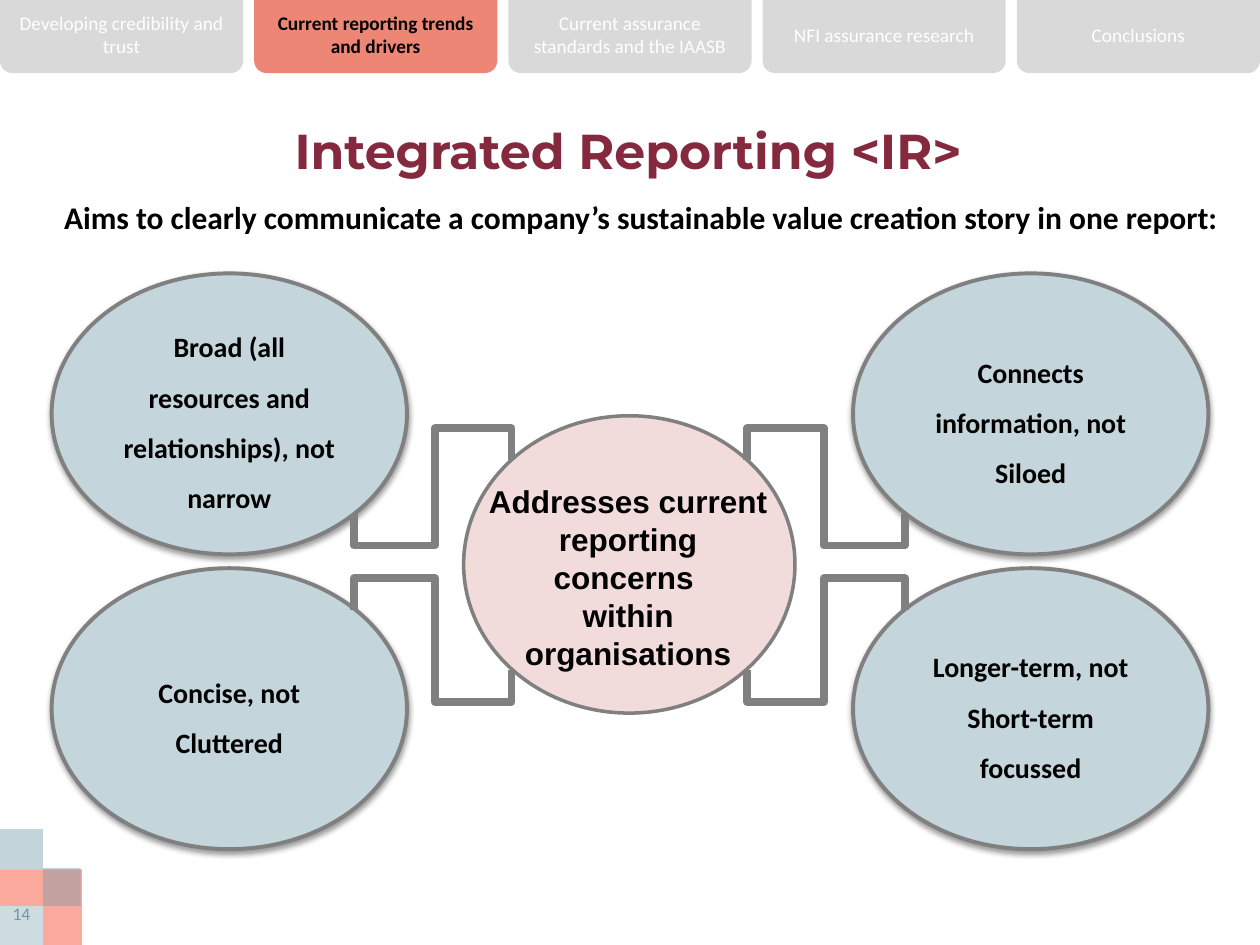
from lxml import etree
from pptx import Presentation
from pptx.dml.color import RGBColor
from pptx.enum.shapes import MSO_SHAPE
from pptx.enum.text import MSO_ANCHOR, PP_ALIGN
from pptx.oxml import parse_xml
from pptx.oxml.ns import nsdecls, qn
from pptx.util import Inches, Pt

BLACK = RGBColor(0x00, 0x00, 0x00)
WHITE = RGBColor(0xFF, 0xFF, 0xFF)
GREY = RGBColor(0x80, 0x80, 0x80)
TAB_GREY = RGBColor(0xD9, 0xD9, 0xD9)
TAB_ACTIVE = RGBColor(0xED, 0x86, 0x74)
MAROON = RGBColor(0x85, 0x29, 0x3F)
PINK = RGBColor(0xF2, 0xDC, 0xDB)
PALE_BLUE = RGBColor(0xC5, 0xD5, 0xDC)
SLATE = RGBColor(0x71, 0x98, 0xA9)
SALMON = RGBColor(0xFA, 0xA9, 0x9C)
LIGHT_BLUE = RGBColor(0xCE, 0xDB, 0xE0)

SHADOW = (
    f'<a:effectLst {nsdecls("a")}>'
    '<a:outerShdw blurRad="40000" dist="20000" dir="5400000" rotWithShape="0">'
    '<a:srgbClr val="000000"><a:alpha val="38000"/></a:srgbClr>'
    '</a:outerShdw></a:effectLst>'
)


def add_filled_shape(kind, left, top, width, height, fill, line_width=None):
    shape = slide.shapes.add_shape(
        kind, Inches(left), Inches(top), Inches(width), Inches(height))
    shape.shadow.inherit = False
    shape.fill.solid()
    shape.fill.fore_color.rgb = fill
    if line_width is None:
        shape.line.fill.background()
    else:
        shape.line.color.rgb = GREY
        shape.line.width = Pt(line_width)
    return shape


def write_text(shape, lines, size, color, bold=False, font="Calibri",
               align=PP_ALIGN.CENTER, spacing=None):
    frame = shape.text_frame
    frame.word_wrap = True
    for index, line in enumerate(lines):
        paragraph = frame.add_paragraph() if index else frame.paragraphs[0]
        paragraph.alignment = align
        paragraph.line_spacing = spacing
        run = paragraph.add_run()
        run.text = line
        run.font.name = font
        run.font.size = Pt(size)
        run.font.bold = bold
        run.font.color.rgb = color


presentation = Presentation()
presentation.slide_width = Inches(10)
presentation.slide_height = Inches(7.5)
slide = presentation.slides.add_slide(presentation.slide_layouts[5])

# Title
title = slide.shapes.title
title.left, title.top = Inches(0.12), Inches(0.69)
title.width, title.height = Inches(9.73), Inches(1)
title.text_frame.vertical_anchor = MSO_ANCHOR.MIDDLE
write_text(title, ["Integrated Reporting <IR>"], 28, MAROON, True, "Montserrat")

# Corner squares
squares = [
    (0, 6.9, 0.65, 0.61, SALMON, None),
    (0, 7.19, 0.34, 0.32, LIGHT_BLUE, None),
    (0, 6.58, 0.34, 0.32, SLATE, 41000),
    (0.34, 6.89, 0.3, 0.3, SLATE, 41000),
]
for left, top, width, height, color, opacity in squares:
    square = add_filled_shape(MSO_SHAPE.RECTANGLE, left, top, width, height, color)
    if opacity:
        color_element = square._element.spPr.find(".//" + qn("a:srgbClr"))
        etree.SubElement(color_element, qn("a:alpha"), val=str(opacity))

# Navigation tabs, rounded at the bottom
tab_labels = [
    "Developing credibility and trust",
    "Current reporting trends and drivers",
    "Current assurance standards and the IAASB",
    "NFI assurance research",
    "Conclusions",
]
active_tab = 1
tab_width = 1.93
tab_pitch = (10 - tab_width) / (len(tab_labels) - 1)
for index, label in enumerate(tab_labels):
    active = index == active_tab
    tab = add_filled_shape(
        MSO_SHAPE.ROUND_2_SAME_RECTANGLE, index * tab_pitch, 0, tab_width, 0.58,
        TAB_ACTIVE if active else TAB_GREY)
    tab.adjustments[0] = 0
    tab.adjustments[1] = 0.17
    tab.text_frame.vertical_anchor = MSO_ANCHOR.MIDDLE
    write_text(tab, [label], 11, BLACK if active else WHITE, active)

# Slide number and introduction
number = slide.shapes.add_textbox(
    Inches(-0.09), Inches(7.12), Inches(0.52), Inches(0.43))
write_text(number, ["14"], 10.1, SLATE)
introduction = slide.shapes.add_textbox(
    Inches(0.41), Inches(1.52), Inches(9.61), Inches(0.91))
write_text(
    introduction,
    ["Aims to clearly communicate a company’s sustainable value creation "
     "story in one report:"],
    18, BLACK, True, align=PP_ALIGN.LEFT)

# Central concern
add_filled_shape(MSO_SHAPE.OVAL, 3.68, 3.3, 2.63, 2.36, PINK, 2)
concern = slide.shapes.add_textbox(
    Inches(3.75), Inches(3.78), Inches(2.47), Inches(1.62))
write_text(
    concern,
    ["Addresses current ", "reporting concerns ", "within organisations"],
    18, BLACK, True, "Arial")

# Four qualities around it
qualities = [
    (0.41, 2.17, "Broad (all resources and relationships), not narrow"),
    (0.41, 4.51, "Concise, not Cluttered"),
    (6.77, 4.51, "Longer-term, not Short-term focussed"),
    (6.77, 2.17, "Connects information, not Siloed"),
]
for left, top, label in qualities:
    quality = add_filled_shape(MSO_SHAPE.OVAL, left, top, 2.82, 2.23, PALE_BLUE, 2.25)
    properties = quality._element.spPr
    properties.replace(properties.find(qn("a:effectLst")), parse_xml(SHADOW))
    quality.text_frame.vertical_anchor = MSO_ANCHOR.MIDDLE
    write_text(quality, [label], 16, BLACK, True, spacing=1.5)

# Stepped links: x of centre end, bend and outer end; then the matching heights
link_columns = [(4.06, 3.45, 2.81), (5.93, 6.54, 7.18)]
link_rows = [(3.65, 3.4, 4.33, 4.08), (5.32, 5.57, 4.59, 4.84)]
for inner, bend, outer in link_columns:
    for inner_end, inner_turn, outer_turn, outer_end in link_rows:
        corners = [(inner, inner_turn), (bend, inner_turn), (bend, outer_turn),
                   (outer, outer_turn), (outer, outer_end)]
        builder = slide.shapes.build_freeform(
            Inches(inner), Inches(inner_end), scale=1.0)
        builder.add_line_segments(
            [(Inches(x), Inches(y)) for x, y in corners], close=False)
        link = builder.convert_to_shape()
        link.shadow.inherit = False
        link.fill.background()
        link.line.color.rgb = GREY
        link.line.width = Pt(4.5)
        etree.SubElement(link._element.spPr.find(qn("a:ln")), qn("a:round"))

presentation.save("out.pptx")
